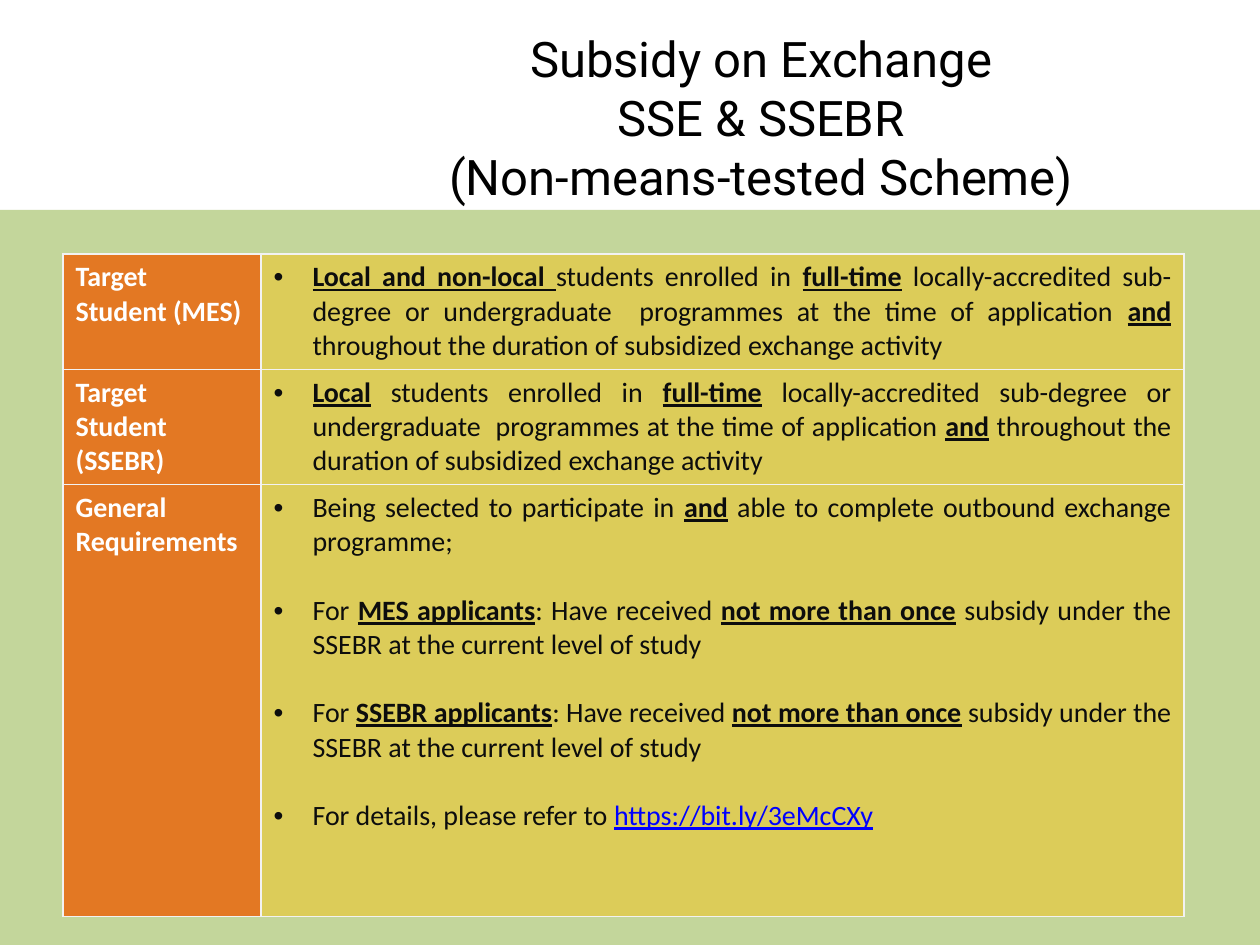
from pptx import Presentation
from pptx.dml.color import RGBColor
from pptx.enum.shapes import MSO_SHAPE
from pptx.enum.text import MSO_ANCHOR, MSO_AUTO_SIZE, PP_ALIGN
from pptx.oxml.ns import qn
from pptx.util import Pt
from lxml import etree

RECTANGLE = MSO_SHAPE.RECTANGLE
MIDDLE, TOP = MSO_ANCHOR.MIDDLE, MSO_ANCHOR.TOP
NO_AUTOFIT = MSO_AUTO_SIZE.NONE
LEFT, CENTER, JUSTIFY = PP_ALIGN.LEFT, PP_ALIGN.CENTER, PP_ALIGN.JUSTIFY

EMU_PER_PX = 914400 / 126
COLORS = {
    "band": "C3D69B", "title": "000000", "label": "FFFFFF", "body": "0D0D0D",
    "link": "0000FF", "label_fill": "E37823", "body_fill": "FFC000", "border": "F2F2F2",
}
BODY_OPACITY = 42
BULLET_INDENT = 39
PARAGRAPH_GAP = 19.5

TITLE_LINES = ["Subsidy on Exchange", "SSE & SSEBR", "(Non-means-tested Scheme)"]
ENROLMENT = (
    "students enrolled in *full-time* locally-accredited sub-degree or undergraduate  programmes "
    "at the time of application *and* throughout the duration of subsidized exchange activity"
)
APPLICANT_RULE = (
    "For *{} applicants*: Have received *not more than once* subsidy under the "
    "SSEBR at the current level of study"
)
DETAILS_LINK = "https://bit.ly/3eMcCXy"
ROWS = [
    (["Target", "Student (MES)"], ["*Local and non-local *" + ENROLMENT]),
    (["Target", "Student (SSEBR)"], ["*Local* " + ENROLMENT]),
    (["General Requirements"], [
        "Being selected to participate in *and* able to complete outbound exchange programme;",
        APPLICANT_RULE.format("MES"),
        APPLICANT_RULE.format("SSEBR"),
        "For details, please refer to ",
    ]),
]
COLUMN_WIDTHS = [198, 923]
ROW_HEIGHTS = [115, 115, 432]


def px(length):
    """Turn pixels into EMU."""
    return round(length * EMU_PER_PX)


def color(name):
    """Look up a named colour."""
    return RGBColor.from_string(COLORS[name])


def add_text(paragraph, text, size=16, font="Calibri", fill="body", bold=False, underline=False):
    """Append one formatted run to a paragraph."""
    run = paragraph.add_run()
    run.text = text
    run.font.size = Pt(size)
    run.font.name = font
    run.font.bold = bold
    run.font.underline = underline
    run.font.color.rgb = color(fill)


def add_marked_text(paragraph, text):
    """Append text whose starred parts are bold and underlined."""
    for index, part in enumerate(text.split("*")):
        if part:
            add_text(paragraph, part, bold=index % 2 == 1, underline=index % 2 == 1)


def add_bullet(paragraph):
    """Give a paragraph a hanging bullet."""
    properties = paragraph._p.get_or_add_pPr()
    properties.set("marL", str(px(BULLET_INDENT)))
    properties.set("indent", str(-px(BULLET_INDENT)))
    etree.SubElement(properties, qn("a:buFont"), typeface="Arial")
    etree.SubElement(properties, qn("a:buChar"), char="•")


def cell_paragraphs(cell, count):
    """Return the given number of paragraphs of an empty cell."""
    frame = cell.text_frame
    return [frame.paragraphs[0]] + [frame.add_paragraph() for _ in range(count - 1)]


def format_cell(cell, fill, opacity=100):
    """Set the borders, fill and anchor of a cell."""
    cell.vertical_anchor = TOP
    properties = cell._tc.get_or_add_tcPr()
    for side in ("a:lnL", "a:lnR", "a:lnT", "a:lnB"):
        line = etree.SubElement(properties, qn(side), w=str(Pt(1)))
        solid = etree.SubElement(line, qn("a:solidFill"))
        etree.SubElement(solid, qn("a:srgbClr"), val=COLORS["border"])
    cell.fill.solid()
    cell.fill.fore_color.rgb = color(fill)
    if opacity < 100:
        fill_color = properties.find(qn("a:solidFill")).find(qn("a:srgbClr"))
        etree.SubElement(fill_color, qn("a:alpha"), val=str(opacity * 1000))


def add_band(slide, left, top, width, height):
    """Draw the coloured area behind the table."""
    band = slide.shapes.add_shape(RECTANGLE, px(left), px(top), px(width), px(height))
    band.shadow.inherit = False
    band.fill.solid()
    band.fill.fore_color.rgb = color("band")
    band.line.fill.background()


def set_title(slide, left, top, width, height):
    """Place and fill the title placeholder."""
    title = slide.shapes.title
    title.left, title.top, title.width, title.height = map(px, (left, top, width, height))
    frame = title.text_frame
    frame.auto_size = NO_AUTOFIT
    frame.word_wrap = True
    frame.vertical_anchor = MIDDLE
    paragraph = frame.paragraphs[0]
    paragraph.alignment = CENTER
    for index, line in enumerate(TITLE_LINES):
        if index:
            paragraph.add_line_break()
        add_text(paragraph, line, size=28, font="Roboto", fill="title")


def fill_label(cell, lines):
    """Write a row heading."""
    format_cell(cell, "label_fill")
    for paragraph, line in zip(cell_paragraphs(cell, len(lines)), lines):
        paragraph.alignment = LEFT
        add_text(paragraph, line, fill="label", bold=True)


def fill_body(cell, items):
    """Write the bulleted items of a row."""
    format_cell(cell, "body_fill", BODY_OPACITY)
    for index, paragraph in enumerate(cell_paragraphs(cell, len(items))):
        paragraph.alignment = JUSTIFY
        if index:
            paragraph.space_before = Pt(PARAGRAPH_GAP)
        add_bullet(paragraph)
        add_marked_text(paragraph, items[index])


def add_requirements(slide, left, top):
    """Build the table of target students and requirements."""
    frame = slide.shapes.add_table(
        len(ROWS), len(COLUMN_WIDTHS), px(left), px(top),
        px(sum(COLUMN_WIDTHS)), px(sum(ROW_HEIGHTS)),
    )
    table = frame.table
    table.first_row = False
    table.horz_banding = False
    for column, width in zip(table.columns, COLUMN_WIDTHS):
        column.width = px(width)
    for index, (labels, items) in enumerate(ROWS):
        table.rows[index].height = px(ROW_HEIGHTS[index])
        fill_label(table.cell(index, 0), labels)
        fill_body(table.cell(index, 1), items)
    last_paragraph = table.cell(len(ROWS) - 1, 1).text_frame.paragraphs[-1]
    add_text(last_paragraph, DETAILS_LINK, fill="link", underline=True)


def main():
    """Build and save the presentation."""
    presentation = Presentation()
    presentation.slide_width = px(1260)
    presentation.slide_height = px(945)
    slide = presentation.slides.add_slide(presentation.slide_layouts[5])
    add_band(slide, 0, 210, 1260, 735)
    set_title(slide, 325, 38, 872, 158)
    add_requirements(slide, 63, 254)
    presentation.save("out.pptx")


if __name__ == "__main__":
    main()
